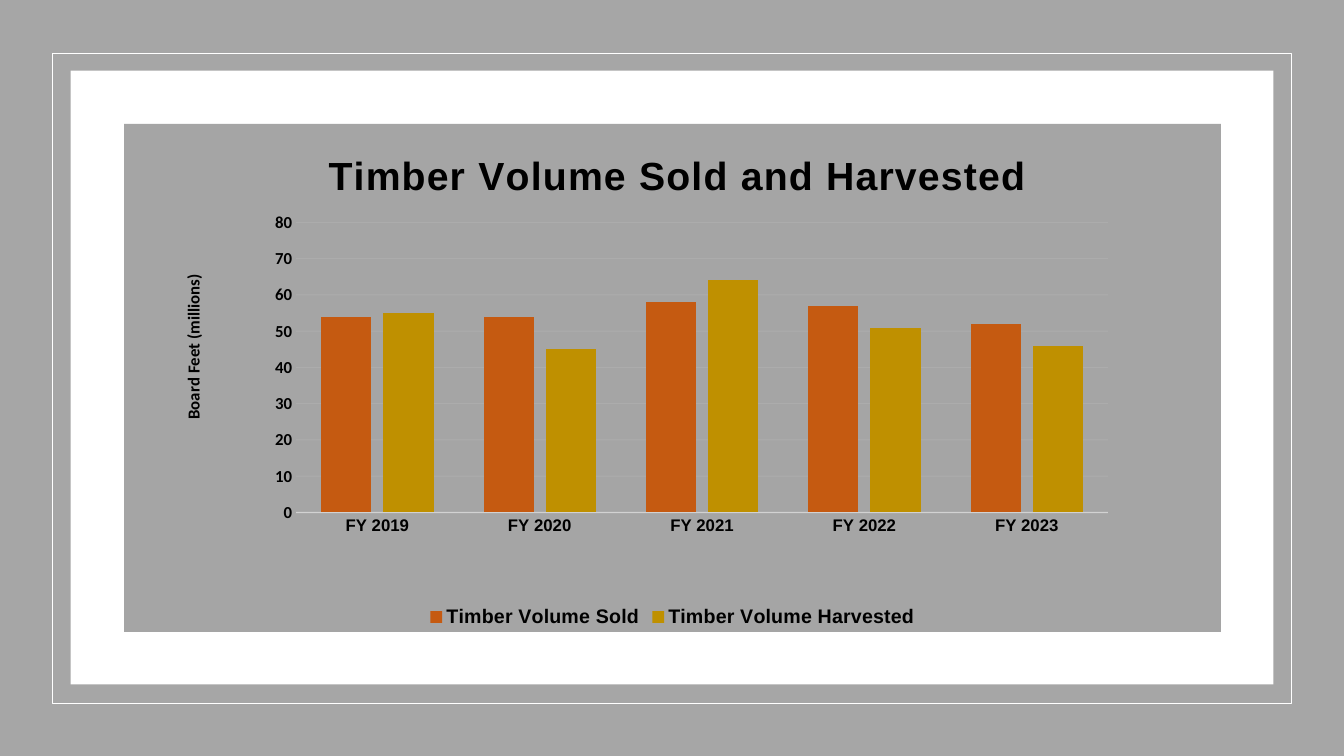
from dataclasses import dataclass

from lxml import etree
from pptx import Presentation
from pptx.chart.data import CategoryChartData
from pptx.dml.color import RGBColor
from pptx.enum.chart import XL_CHART_TYPE, XL_LEGEND_POSITION, XL_TICK_MARK
from pptx.enum.shapes import MSO_SHAPE
from pptx.oxml import parse_xml
from pptx.oxml.ns import nsdecls, qn
from pptx.util import Inches, Pt

COLUMNS = XL_CHART_TYPE.COLUMN_CLUSTERED
LEGEND_BOTTOM = XL_LEGEND_POSITION.BOTTOM
NO_TICK = XL_TICK_MARK.NONE
RECT = MSO_SHAPE.RECTANGLE


@dataclass(frozen=True)
class Theme:
    backdrop: str = "A6A6A6"
    panel: str = "FFFFFF"
    chart: str = "A5A5A5"
    text: str = "000000"
    rule: str = "F2F2F2"
    sold: str = "C55A11"
    harvested: str = "BF9000"
    heading_font: str = "Arial"
    body_font: str = "Calibri"
    title_size: int = 28
    legend_size: int = 14
    axis_size: int = 12
    base_size: int = 10


THEME = Theme()
YEARS = [f"FY {year}" for year in range(2019, 2024)]
VOLUMES = [
    ("Timber Volume Sold", (54, 54, 58, 57, 52), THEME.sold),
    ("Timber Volume Harvested", (55, 45, 64, 51, 46), THEME.harvested),
]


def rgb(color):
    return RGBColor.from_string(color)


def style_font(font, size, name, bold=True):
    font.size, font.name, font.bold = Pt(size), name, bold
    font.color.rgb = rgb(THEME.text)


def style_line(line, width, opacity):
    line.width = Pt(width)
    line.color.rgb = rgb(THEME.rule)
    color = next(line.fill._xPr.iter(qn("a:srgbClr")))
    etree.SubElement(color, qn("a:alpha")).set("val", str(opacity * 1000))


def set_layout(parent, x, y, size=None):
    """Place a chart part at fractions of the chart's box."""
    parts = [("xMode", "edge"), ("yMode", "edge"), ("x", x), ("y", y)]
    if size:
        parts.insert(0, ("layoutTarget", "inner"))
        parts += [("w", size[0]), ("h", size[1])]
    old = parent.find(qn("c:layout"))
    if old is not None:
        parent.remove(old)
    layout = etree.Element(qn("c:layout"))
    manual = etree.SubElement(layout, qn("c:manualLayout"))
    for tag, value in parts:
        etree.SubElement(manual, qn(f"c:{tag}")).set("val", str(value))
    tx = parent.find(qn("c:tx"))
    if tx is None:
        parent.insert(0, layout)
    else:
        tx.addnext(layout)


def set_title(title, text, size, font, x, y, spacing=0):
    tf = title.text_frame
    tf.text = text
    r = tf.paragraphs[0].runs[0]
    style_font(r.font, size, font)
    r.font._element.set("spc", str(spacing))
    set_layout(title._element, x, y)


def add_rect(slide, box, fill=None, line=None):
    sp = slide.shapes.add_shape(RECT, *map(Inches, box))
    sp.shadow.inherit = False
    if fill:
        sp.fill.solid()
        sp.fill.fore_color.rgb = rgb(fill)
    else:
        sp.fill.background()
    if line:
        sp.line.color.rgb = rgb(line)
        sp.line.width = Pt(1)
    else:
        sp.line.fill.background()


def add_frame(slide, box):
    """Grey backdrop, thin white outline and white panel."""
    left, top, width, height = box
    add_rect(slide, box, fill=THEME.backdrop)
    add_rect(slide, (left + 0.52, top + 0.53, width - 1.04, height - 1.05),
             line=THEME.panel)
    add_rect(slide, (left + 0.7, top + 0.7, width - 1.4, height - 1.41),
             fill=THEME.panel)


def style_axes(chart):
    years, volume = chart.category_axis, chart.value_axis
    for axis, font in ((years, THEME.heading_font), (volume, THEME.body_font)):
        axis.major_tick_mark = axis.minor_tick_mark = NO_TICK
        style_font(axis.tick_labels.font, THEME.axis_size, font)
    style_line(years.format.line, 1, 54)

    volume.minimum_scale, volume.maximum_scale = 0, 80
    volume.major_unit = 10
    volume.tick_labels.number_format = "0"
    volume.tick_labels.number_format_is_linked = False
    volume.format.line.fill.background()
    style_line(volume.major_gridlines.format.line, 0.75, 10)
    set_title(volume.axis_title, "Board Feet (millions)", THEME.axis_size,
              THEME.body_font, 0.05, 0.29)


def add_volume_chart(slide, box):
    data = CategoryChartData(number_format="0")
    data.categories = YEARS
    for name, values, _ in VOLUMES:
        data.add_series(name, values)
    chart = slide.shapes.add_chart(COLUMNS, *map(Inches, box), data).chart
    style_font(chart.font, THEME.base_size, THEME.body_font, bold=False)

    # Chart background
    chart.element.find(qn("c:chart")).addnext(parse_xml(
        f'<c:spPr {nsdecls("c", "a")}><a:solidFill>'
        f'<a:srgbClr val="{THEME.chart}"/></a:solidFill>'
        '<a:ln><a:noFill/></a:ln></c:spPr>'))

    # Title and legend
    chart.has_title = True
    set_title(chart.chart_title, "Timber Volume Sold and Harvested",
              THEME.title_size, THEME.heading_font, 0.18, 0.04, spacing=100)
    chart.chart_title.include_in_layout = False
    chart.has_legend = True
    chart.legend.position = LEGEND_BOTTOM
    chart.legend.include_in_layout = False
    style_font(chart.legend.font, THEME.legend_size, THEME.heading_font)

    # Columns
    plot = chart.plots[0]
    plot.gap_width, plot.overlap = 100, -24
    plot.vary_by_categories = False
    for series, (_, _, color) in zip(plot.series, VOLUMES):
        series.format.fill.solid()
        series.format.fill.fore_color.rgb = rgb(color)

    style_axes(chart)
    plot_area = next(chart.element.iter(qn("c:plotArea")))
    set_layout(plot_area, 0.157, 0.194, (0.74, 0.571))


def main():
    prs = Presentation()
    prs.slide_width, prs.slide_height = Inches(13.33), Inches(7.5)
    slide = prs.slides.add_slide(prs.slide_layouts[6])
    add_frame(slide, (0, 0, 13.33, 7.5))
    add_volume_chart(slide, (1.23, 1.23, 10.88, 5.04))
    prs.save("out.pptx")


if __name__ == "__main__":
    main()
